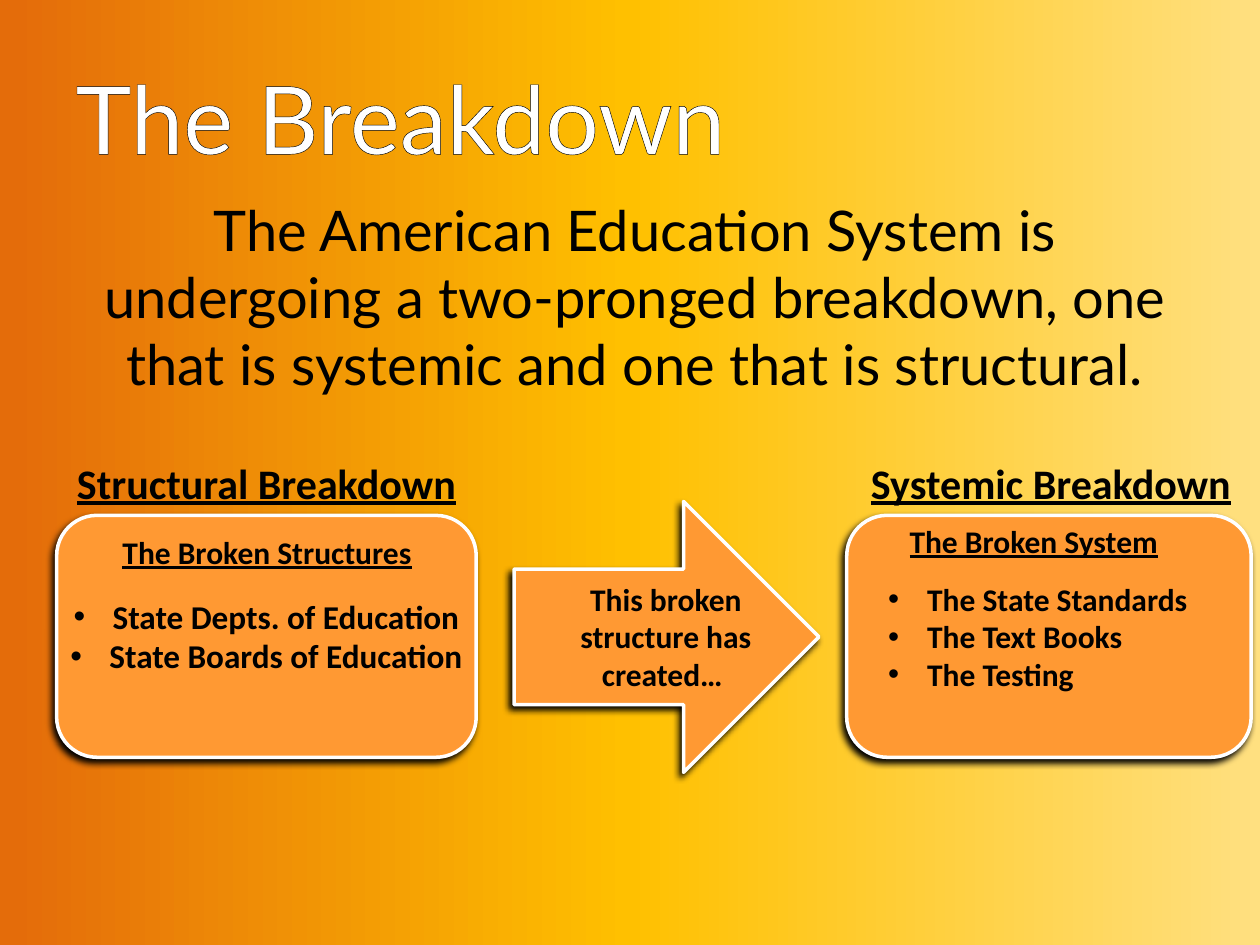
"""Builds the slide on the two-pronged breakdown of the American education system."""
from pptx import Presentation
from pptx.dml.color import RGBColor
from pptx.enum.shapes import MSO_SHAPE as Shape
from pptx.enum.text import MSO_ANCHOR as Anchor, MSO_AUTO_SIZE as AutoSize, PP_ALIGN as Align
from pptx.oxml import parse_xml
from pptx.oxml.ns import nsdecls
from pptx.util import Inches, Pt

COLORS = {"text": "000000", "title": "FFFFFF", "box": "FF9933", "line": "FFFFFF",
          "shadow": "000000", "left": "E46C0A", "middle": "FFC000", "right": "FFE080"}
COLUMNS, ROWS = 10, 7.5
BODY = {"name": "Lato", "size": Pt(32)}
HEADING = {"name": "Calibri", "size": Pt(24), "bold": True, "underline": True}
SUBHEADING = HEADING | {"size": Pt(18)}
LABEL = {"name": "Calibri", "size": Pt(18), "bold": True}
LARGE_LABEL = LABEL | {"size": Pt(19)}

presentation = Presentation()
presentation.slide_width, presentation.slide_height = Inches(COLUMNS), Inches(ROWS)
column = presentation.slide_width / COLUMNS
row = presentation.slide_height / ROWS
slide = presentation.slides.add_slide(presentation.slide_layouts[5])


def place(left, top, width, height):
    return [round(left * column), round(top * row), round(width * column), round(height * row)]


def write(frame, lines, formats, align, color="text", bullets=False):
    frame.word_wrap = True
    for index, line in enumerate(lines):
        paragraph = frame.add_paragraph() if index else frame.paragraphs[0]
        paragraph.alignment = align
        run = paragraph.add_run()
        run.text = line
        for name, value in formats.items():
            setattr(run.font, name, value)
        run.font.color.rgb = RGBColor.from_string(COLORS[color])
        if bullets:
            properties = paragraph._p.get_or_add_pPr()
            properties.set("marL", str(Inches(0.31)))
            properties.set("indent", str(-Inches(0.31)))
            properties.append(parse_xml(f'<a:buFont {nsdecls("a")} typeface="Arial"/>'))
            properties.append(parse_xml(f'<a:buChar {nsdecls("a")} char="•"/>'))


stops = "".join(f'<a:gs pos="{share * 1000}"><a:srgbClr val="{COLORS[name]}"/></a:gs>'
                for share, name in [(1, "left"), (50, "middle"), (100, "right")])
slide._element.cSld.insert(0, parse_xml(
    f'<p:bg {nsdecls("p", "a")}><p:bgPr><a:gradFill rotWithShape="1"><a:gsLst>{stops}</a:gsLst>'
    '<a:lin ang="0" scaled="0"/></a:gradFill><a:effectLst/></p:bgPr></p:bg>'))

title = slide.shapes.title
title.left, title.top, title.width, title.height = place(0.5, 0.3, 9, 1.25)
title.text_frame.vertical_anchor = Anchor.MIDDLE
write(title.text_frame, ["The Breakdown"], {"name": "Lato", "size": Pt(54)}, Align.LEFT, "title")
title_run = title.text_frame.paragraphs[0].runs[0]
title_run.font._element.insert(0, parse_xml(
    f'<a:ln {nsdecls("a")} w="{Pt(1.5)}"><a:solidFill><a:srgbClr val="{COLORS["text"]}"/>'
    '</a:solidFill></a:ln>'))

statement = slide.shapes.add_textbox(*place(0.54, 1.5, 9, 2)).text_frame
write(statement, ["The American Education System is undergoing a two-pronged breakdown, "
                  "one that is systemic and one that is structural."], BODY, Align.CENTER)
statement.paragraphs[0].space_before = Pt(6.4)

arrow_group = slide.shapes.add_group_shape()
for parent, kind, area in [
    (slide, Shape.ROUNDED_RECTANGLE, (0.45, 4.09, 3.33, 1.92)),
    (slide, Shape.ROUNDED_RECTANGLE, (6.72, 4.09, 3.21, 1.92)),
    (arrow_group, Shape.RIGHT_ARROW, (4.08, 3.98, 2.42, 2.15)),
]:
    shape = parent.shapes.add_shape(kind, *place(*area))
    shape.fill.solid()
    shape.fill.fore_color.rgb = RGBColor.from_string(COLORS["box"])
    shape.line.color.rgb = RGBColor.from_string(COLORS["line"])
    shape.line.width = Pt(2)
    shape._element.spPr.append(parse_xml(
        f'<a:effectLst {nsdecls("a")}><a:outerShdw blurRad="{Pt(4)}" dist="{Pt(3)}" '
        f'dir="{135 * 60000}" algn="tr" rotWithShape="0"><a:srgbClr val="{COLORS["shadow"]}"/>'
        '</a:outerShdw></a:effectLst>'))

for parent, area, lines, formats, align, bullets in [
    (slide, (0.44, 3.58, 3.35, 0.5), ["Structural Breakdown"], HEADING, Align.CENTER, False),
    (slide, (6.74, 3.58, 3.2, 0.5), ["Systemic Breakdown"], HEADING, Align.CENTER, False),
    (slide, (0.87, 4.18, 2.5, 0.4), ["The Broken Structures"], SUBHEADING, Align.CENTER, False),
    (slide, (0.45, 4.68, 3.33, 0.74), ["State Depts. of Education", "State Boards of Education"],
     LARGE_LABEL, Align.CENTER, True),
    (slide, (7.12, 4.09, 2.42, 0.4), ["The Broken System"], SUBHEADING, Align.LEFT, False),
    (slide, (6.95, 4.55, 2.75, 1.01), ["The State Standards", "The Text Books", "The Testing"],
     LABEL, Align.LEFT, True),
    (arrow_group, (4.12, 4.55, 2.33, 1.01), ["This broken structure has created… "],
     LABEL, Align.CENTER, False),
]:
    frame = parent.shapes.add_textbox(*place(*area)).text_frame
    frame.auto_size = AutoSize.SHAPE_TO_FIT_TEXT
    write(frame, lines, formats, align, bullets=bullets)

presentation.save("out.pptx")
